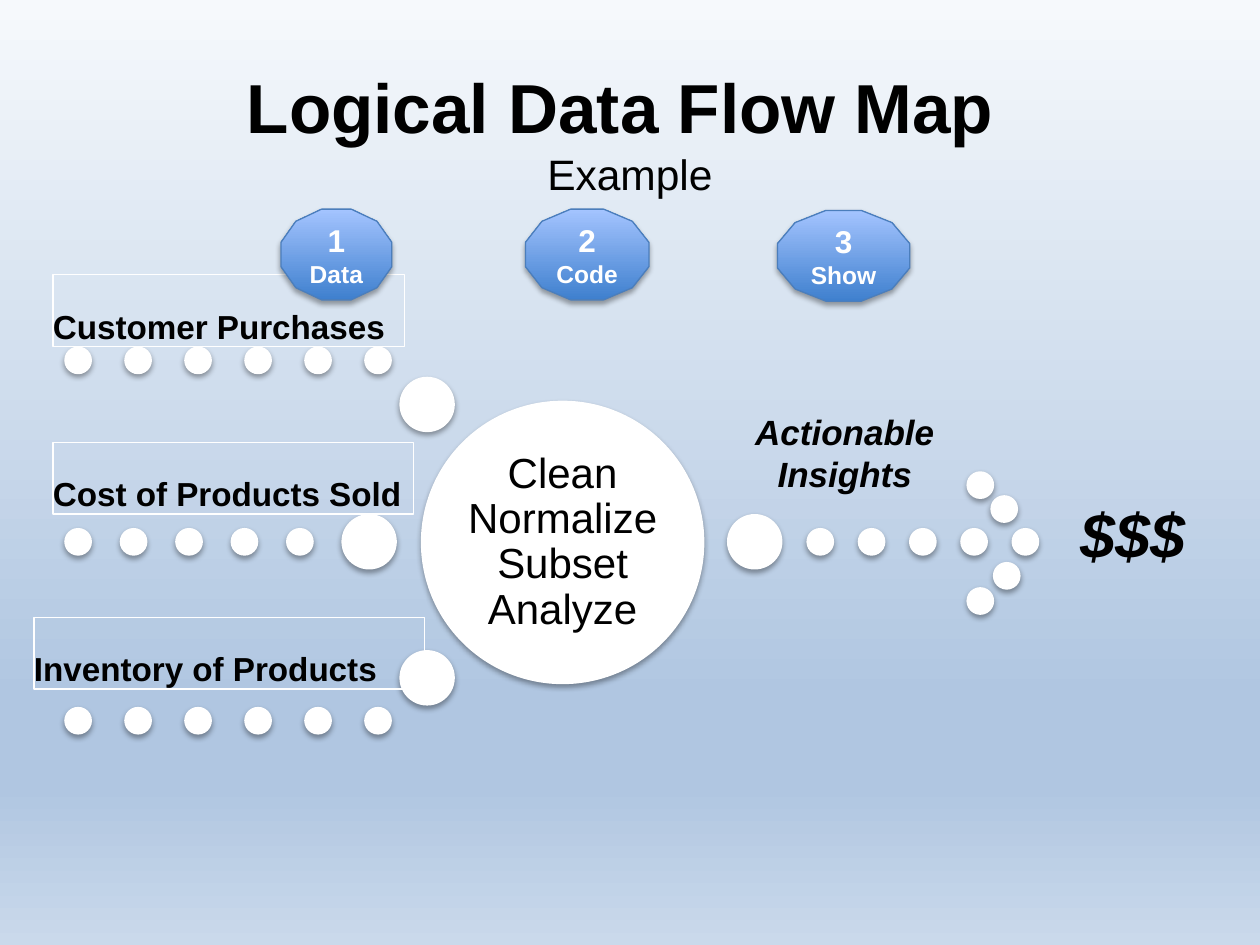
from lxml import etree
from pptx import Presentation
from pptx.dml.color import RGBColor
from pptx.enum.shapes import MSO_SHAPE
from pptx.enum.text import MSO_ANCHOR, MSO_AUTO_SIZE, PP_ALIGN
from pptx.oxml.ns import qn
from pptx.util import Inches, Pt

OVAL, DODECAGON, RECTANGLE = MSO_SHAPE.OVAL, MSO_SHAPE.DODECAGON, MSO_SHAPE.RECTANGLE
MIDDLE, BOTTOM, TOP = MSO_ANCHOR.MIDDLE, MSO_ANCHOR.BOTTOM, MSO_ANCHOR.TOP
LEFT, CENTER = PP_ALIGN.LEFT, PP_ALIGN.CENTER

BLACK = RGBColor(0x00, 0x00, 0x00)
WHITE = RGBColor(0xFF, 0xFF, 0xFF)
BADGE_EDGE = RGBColor(0x4B, 0x7E, 0xBC)
BADGE_STOPS = [(0, RGBColor(0x3F, 0x80, 0xCE)), (100, RGBColor(0xA4, 0xC4, 0xFF))]
SKY_STOPS = [
    (0, RGBColor(0xF6, 0xF9, 0xFC)),
    (74, RGBColor(0xB0, 0xC6, 0xE1)),
    (83, RGBColor(0xB0, 0xC6, 0xE1)),
    (100, RGBColor(0xCA, 0xD9, 0xEB)),
]

presentation = Presentation()
presentation.slide_width, presentation.slide_height = Inches(10), Inches(7.5)
slide = presentation.slides.add_slide(presentation.slide_layouts[5])
shapes = slide.shapes

# Grid of 100 columns by 75 rows
COLUMN = presentation.slide_width / 100
ROW = presentation.slide_height / 75
SMALL, LARGE = 2.2, 4.4


def set_gradient(element, fill, stops, angle):
    fill.gradient()
    fill.gradient_angle = angle
    stop_list = element.find(".//" + qn("a:gsLst"))
    stop_list.clear()
    for position, color in stops:
        stop = etree.SubElement(stop_list, qn("a:gs"), pos=str(position * 1000))
        etree.SubElement(stop, qn("a:srgbClr"), val=str(color))


def add_shadowed(kind, left, top, width, height):
    shape = shapes.add_shape(
        kind, int(left * COLUMN), int(top * ROW), int(width * COLUMN), int(height * ROW))
    shape.fill.solid()
    shape.fill.fore_color.rgb = WHITE
    shape.line.fill.background()
    shape.shadow.inherit = False
    effects = shape.element.spPr.find(qn("a:effectLst"))
    shadow = etree.SubElement(
        effects, qn("a:outerShdw"), blurRad=str(Pt(3.1)), dist=str(Pt(1.8)),
        dir="5400000", rotWithShape="0")
    color = etree.SubElement(shadow, qn("a:srgbClr"), val=str(BLACK))
    etree.SubElement(color, qn("a:alpha"), val="35000")
    return shape


# Background
set_gradient(slide.element, slide.background.fill, SKY_STOPS, 270)

# Title with a lighter second line
title = shapes.title
title.left, title.top = 0, int(4.2 * ROW)
title.width, title.height = presentation.slide_width, int(12.5 * ROW)
title.text_frame.vertical_anchor = MIDDLE
title.text_frame.auto_size = MSO_AUTO_SIZE.NONE
paragraph = title.text_frame.paragraphs[0]
paragraph.alignment = CENTER
for text, size, bold in [("Logical Data Flow Map ", 39.6, True), ("Example", 24.3, False)]:
    if paragraph.runs:
        paragraph.add_line_break()
    run = paragraph.add_run()
    run.text = text
    for name, value in {"name": "Arial", "size": Pt(size), "bold": bold}.items():
        setattr(run.font, name, value)
    run.font.color.rgb = BLACK

# Trails of small dots: first left, top, step, count
for left, top, step, count in [
    (64, 41.9, 4.07, 5),
    (5.1, 27.5, 4.76, 6),
    (5.1, 41.9, 4.4, 5),
    (5.1, 56.1, 4.76, 6),
]:
    for index in range(count):
        add_shadowed(OVAL, left + index * step, top, SMALL, SMALL)

# Arrow tip, then the large dots around the hub
for left, top in [(76.7, 37.4), (78.6, 39.3), (78.8, 44.6), (76.7, 46.6)]:
    add_shadowed(OVAL, left, top, SMALL, SMALL)
for left, top in [(57.7, 40.8), (31.7, 29.9), (27.1, 40.8), (31.7, 51.6)]:
    add_shadowed(OVAL, left, top, LARGE, LARGE)

# Texts to fill in: shape, lines with sizes, color, bold, italic, alignment, anchor, spacing
texts = []

hub = add_shadowed(OVAL, 33.4, 31.8, 22.5, 22.5)
texts.append((hub, [("Clean Normalize Subset Analyze", 24)],
              BLACK, False, False, CENTER, MIDDLE, 0.9))

# Source labels in thin white frames
for label, left, top, width in [
    ("Inventory of Products", 2.7, 49, 31),
    ("Cost of Products Sold", 4.2, 35.1, 28.6),
    ("Customer Purchases", 4.2, 21.8, 27.9),
]:
    frame = shapes.add_shape(
        RECTANGLE, int(left * COLUMN), int(top * ROW), int(width * COLUMN), int(5.7 * ROW))
    frame.shadow.inherit = False
    frame.fill.background()
    frame.line.color.rgb = WHITE
    frame.line.width = Pt(0.75)
    texts.append((frame, [(label, 19)], BLACK, True, False, LEFT, BOTTOM, 0.9))

for shape, *_ in texts:
    for side in ("left", "top", "right", "bottom"):
        setattr(shape.text_frame, "margin_" + side, 0)

# Step badges
for number, word, left, top, width in [
    ("3", "Show", 61.7, 16.7, 10.5),
    ("2", "Code", 41.7, 16.6, 9.8),
    ("1", "Data", 22.3, 16.6, 8.8),
]:
    badge = add_shadowed(DODECAGON, left, top, width, 7.2)
    set_gradient(badge.element, badge.fill, BADGE_STOPS, 90)
    badge.line.color.rgb = BADGE_EDGE
    badge.line.width = Pt(0.75)
    texts.append((badge, [(number, 18), (word, 14)],
                  WHITE, True, False, CENTER, MIDDLE, 1.0))

# Outcome texts
for text, size, alignment, left, top, width, height in [
    ("$$$", 36, LEFT, 84.8, 38.8, 11.5, 7.1),
    ("Actionable Insights", 20, CENTER, 55.9, 32.1, 22.3, 7.7),
]:
    box = shapes.add_textbox(
        int(left * COLUMN), int(top * ROW), int(width * COLUMN), int(height * ROW))
    texts.append((box, [(text, size)], BLACK, True, True, alignment, TOP, 1.0))

# Write and format every text
for shape, lines, color, bold, italic, alignment, anchor, spacing in texts:
    text_frame = shape.text_frame
    text_frame.word_wrap = True
    text_frame.vertical_anchor = anchor
    text_frame.text = "\n".join(text for text, size in lines)
    for paragraph, (text, size) in zip(text_frame.paragraphs, lines):
        paragraph.alignment = alignment
        paragraph.line_spacing = spacing
        font = paragraph.runs[0].font
        formats = {"name": "Arial", "size": Pt(size), "bold": bold, "italic": italic}
        for name, value in formats.items():
            setattr(font, name, value)
        font.color.rgb = color

presentation.save("out.pptx")
